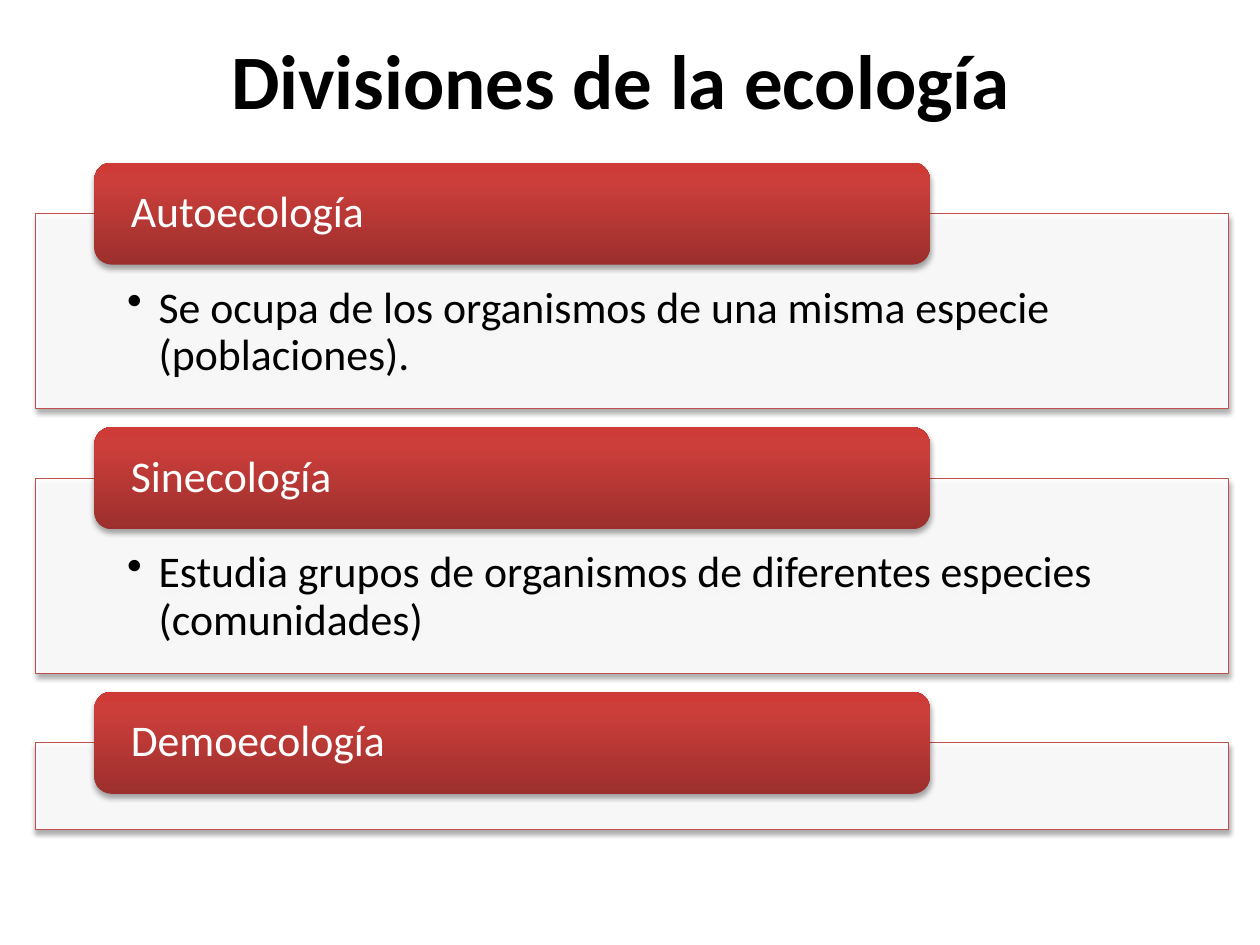
"""Build a slide listing the divisions of ecology as labelled panels."""
from lxml import etree
from pptx import Presentation
from pptx import util as u
from pptx.dml.color import RGBColor
from pptx.enum import shapes, text
from pptx.oxml import ns

COLORS = {"black": "000000", "white": "FFFFFF", "border": "C0504D",
          "dark": "9C2F2D", "mid": "CB3E3A", "light": "CE3B37"}
FONT = "Calibri"
FIRST_TOP, PITCH, LABEL_HEIGHT = 1.29, 2.1, 0.81
DIVISIONS = [
    ("Autoecología", "Se ocupa de los organismos de una misma especie (poblaciones).", 1.55),
    ("Sinecología", "Estudia grupos de organismos de diferentes especies (comunidades)", 1.55),
    ("Demoecología", "", 0.69),
]


def rgb(name):
    return RGBColor.from_string(COLORS[name])


def add_child(parent, tag, **attrs):
    return etree.SubElement(parent, ns.qn(tag), **attrs)


def add_shadow(sp):
    sp.shadow.inherit = False
    effects = sp._element.spPr.find(ns.qn("a:effectLst"))
    shadow = add_child(effects, "a:outerShdw", blurRad=str(u.Pt(3.1)), dist=str(u.Pt(1.8)),
                       dir="5400000", rotWithShape="0")
    color = add_child(shadow, "a:srgbClr", val=COLORS["black"])
    add_child(color, "a:alpha", val="35000")


def format_runs(p, size, color, bold=False):
    for r in p.runs:
        r.font.name = FONT
        r.font.size = u.Pt(size)
        r.font.bold = bold
        r.font.color.rgb = rgb(color)


def set_text(sp, words, color, anchor, insets, bullet=False):
    tf = sp.text_frame
    tf.word_wrap = True
    tf.vertical_anchor = anchor
    tf.margin_left, tf.margin_top, tf.margin_right, tf.margin_bottom = map(u.Inches, insets)
    p = tf.paragraphs[0]
    p.text = words
    p.alignment = text.PP_ALIGN.LEFT
    p.line_spacing = 0.9
    if bullet:
        pPr = p._p.get_or_add_pPr()
        pPr.set("marL", str(u.Inches(0.25)))
        pPr.set("indent", str(u.Inches(-0.25)))
        add_child(pPr, "a:buChar", char="•")
    format_runs(p, 25, color)


def add_panel(s, top, height, words):
    sp = s.shapes.add_shape(shapes.MSO_SHAPE.RECTANGLE, u.Inches(0.28), u.Inches(top),
                            u.Inches(9.47), u.Inches(height))
    sp.fill.solid()
    sp.fill.fore_color.rgb = rgb("white")
    color = sp._element.spPr.find(ns.qn("a:solidFill"))[0]
    add_child(color, "a:alpha", val="90000")
    sp.line.color.rgb = rgb("border")
    sp.line.width = u.Pt(0.75)
    add_shadow(sp)
    if words:
        set_text(sp, words, "black", text.MSO_ANCHOR.TOP, (0.73, 0.57, 0.73, 0.19), bullet=True)


def add_label(s, top, words):
    sp = s.shapes.add_shape(shapes.MSO_SHAPE.ROUNDED_RECTANGLE, u.Inches(0.75), u.Inches(top),
                            u.Inches(6.63), u.Inches(LABEL_HEIGHT))
    sp.fill.gradient()
    grad = sp._element.spPr.find(ns.qn("a:gradFill"))
    for child in list(grad):
        grad.remove(child)
    stops = add_child(grad, "a:gsLst")
    for pos, name in ((0, "dark"), (80, "mid"), (100, "light")):
        stop = add_child(stops, "a:gs", pos=str(pos * 1000))
        add_child(stop, "a:srgbClr", val=COLORS[name])
    add_child(grad, "a:lin", ang="16200000", scaled="0")
    sp.line.fill.background()
    add_shadow(sp)
    set_text(sp, words, "white", text.MSO_ANCHOR.MIDDLE, (0.25, 0, 0.25, 0))


def set_title(s, words):
    sp = s.shapes.title
    sp.left, sp.top, sp.width, sp.height = map(u.Inches, (0.43, 0, 9, 1.25))
    tf = sp.text_frame
    tf.text = words
    tf.vertical_anchor = text.MSO_ANCHOR.MIDDLE
    p = tf.paragraphs[0]
    p.alignment = text.PP_ALIGN.CENTER
    format_runs(p, 44, "black", bold=True)


def main():
    prs = Presentation()
    prs.slide_width, prs.slide_height = u.Inches(10), u.Inches(7.5)
    s = prs.slides.add_slide(prs.slide_layouts[5])
    set_title(s, "Divisiones de la ecología")
    for i, (name, description, height) in enumerate(DIVISIONS):
        top = FIRST_TOP + i * PITCH
        add_panel(s, top + LABEL_HEIGHT / 2, height, description)
        add_label(s, top, name)
    prs.save("out.pptx")


if __name__ == "__main__":
    main()
